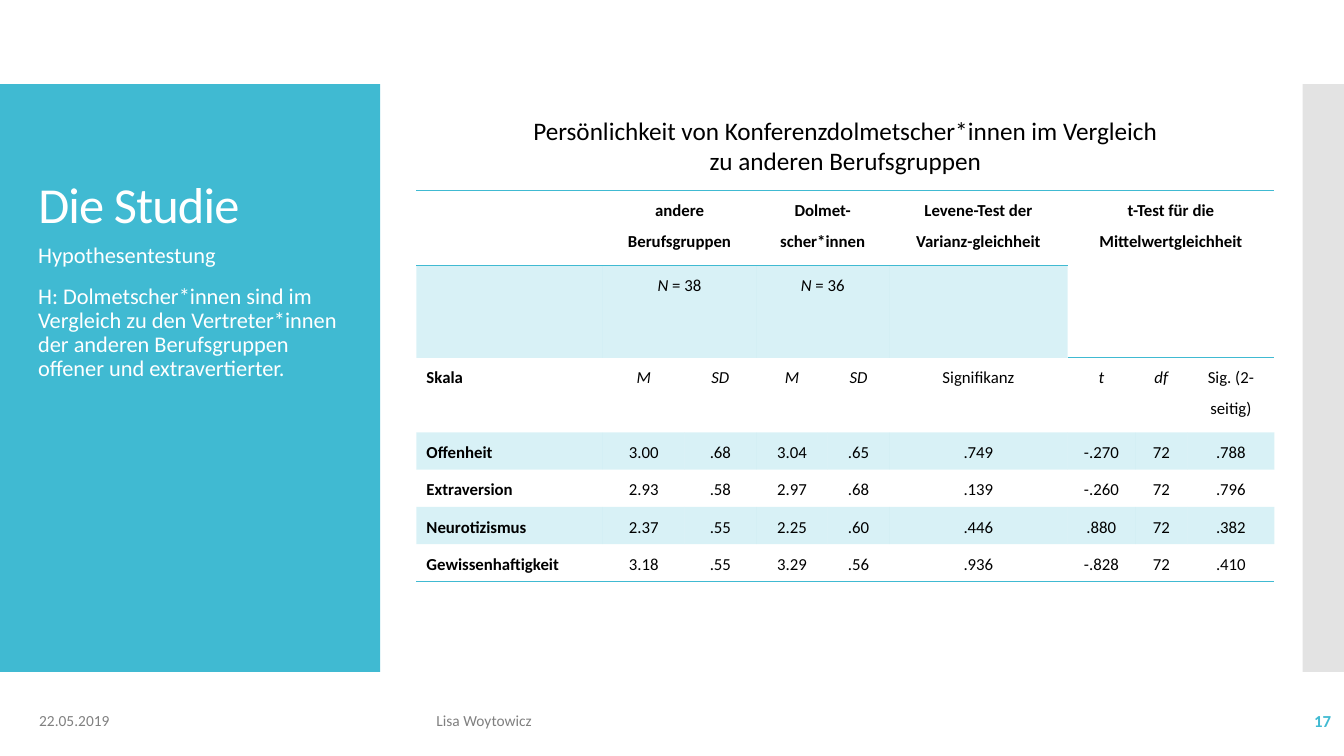
import dataclasses

import pptx
import pptx.dml.color
import pptx.enum.shapes
import pptx.enum.text
import pptx.oxml
import pptx.oxml.ns
import pptx.util

ALIGN = pptx.enum.text.PP_ALIGN
ANCHOR = pptx.enum.text.MSO_ANCHOR
NO_TABLE_STYLE = "{2D5ABB26-0587-4C30-8999-92F81FD0307C}"


@dataclasses.dataclass(frozen=True)
class Theme:
    font: str = "Calibri"
    accent: str = "40BAD2"
    edge: str = "C8C8C8"
    light: str = "FFFFFF"
    dark: str = "000000"
    muted: str = "808080"
    title: int = 36
    caption: int = 18
    body: int = 16
    cell: int = 12
    footer: int = 11
    band_alpha: int = 20
    edge_alpha: int = 50
    rule: int = 1


THEME = Theme()


@dataclasses.dataclass(frozen=True)
class Box:
    """A region in inches; at() gives a sub-region by offset and size."""
    left: float
    top: float
    width: float
    height: float

    def at(self, left, top, width, height):
        return Box(self.left + left, self.top + top, width, height)

    def emu(self):
        return [pptx.util.Inches(n) for n in dataclasses.astuple(self)]


SLIDE = Box(0, 0, 13.33, 7.5)
BAND_TOP, BAND_HEIGHT = SLIDE.height / 9, SLIDE.height * 7 / 9

COLUMNS = [1.85, 0.81, 0.71, 0.71, 0.61, 1.77, 0.67, 0.52, 0.86]
ROWS = [0.74, 0.92, 0.74] + [0.37] * 4
# First row, first column, last row, last column
MERGES = [(0, 1, 0, 2), (0, 3, 0, 4), (0, 6, 1, 8), (1, 1, 1, 2), (1, 3, 1, 4)]
# Asterisk-free cells; "_" before a text sets its first word in italics
CELLS = [
    ["", "andere Berufsgruppen", "", "Dolmet-scher*innen", "",
     "Levene-Test der Varianz-gleichheit", "t-Test für die Mittelwertgleichheit", "", ""],
    ["", "_N = 38", "", "_N = 36", "", "", "", "", ""],
    ["Skala", "_M", "_SD", "_M", "_SD", "Signifikanz", "_t", "_df", "Sig. (2-seitig)"],
    ["Offenheit", "3.00", ".68", "3.04", ".65", ".749", "-.270", "72", ".788"],
    ["Extraversion", "2.93", ".58", "2.97", ".68", ".139", "-.260", "72", ".796"],
    ["Neurotizismus", "2.37", ".55", "2.25", ".60", ".446", ".880", "72", ".382"],
    ["Gewissenhaftigkeit", "3.18", ".55", "3.29", ".56", ".936", "-.828", "72", ".410"],
]


def write(frame, *paragraphs, size, color, bold=False, align=ALIGN.LEFT, anchor=ANCHOR.TOP,
          line=1.0, before=0, after=0, tracking=0):
    """Fill a text frame; a leading "_" sets a paragraph's first word in italics."""
    frame.word_wrap = True
    frame.vertical_anchor = anchor
    for index, text in enumerate(paragraphs):
        paragraph = frame.add_paragraph() if index else frame.paragraphs[0]
        paragraph.alignment = align
        paragraph.line_spacing = line
        paragraph.space_before = pptx.util.Pt(before)
        paragraph.space_after = pptx.util.Pt(after)
        runs = [(text, False)]
        if text.startswith("_"):
            head, gap, rest = text[1:].partition(" ")
            runs = [(head, True), (gap + rest, False)]
        for words, italic in runs:
            if not words:
                continue
            run = paragraph.add_run()
            run.text = words
            run.font.name = THEME.font
            run.font.size = pptx.util.Pt(size)
            run.font.bold = bold
            run.font.italic = italic
            run.font.color.rgb = pptx.dml.color.RGBColor.from_string(color)
            if tracking:
                run.font._element.set("spc", str(tracking))


def add_text(slide, box, *paragraphs, **style):
    frame = slide.shapes.add_textbox(*box.emu()).text_frame
    write(frame, *paragraphs, **style)


def paint(fill, color, alpha=100):
    fill.solid()
    fill.fore_color.rgb = pptx.dml.color.RGBColor.from_string(color)
    if alpha < 100:
        tint = fill._xPr.find(".//" + pptx.oxml.ns.qn("a:srgbClr"))
        tint.append(pptx.oxml.parse_xml(
            f'<a:alpha {pptx.oxml.ns.nsdecls("a")} val="{alpha * 1000}"/>'))


def add_panel(slide, box, color, alpha=100):
    panel = slide.shapes.add_shape(pptx.enum.shapes.MSO_SHAPE.RECTANGLE, *box.emu())
    panel.shadow.inherit = False
    panel.line.fill.background()
    paint(panel.fill, color, alpha)


def add_rule(cell, side):
    """Draw a cell border; call before filling, as borders come first in the cell."""
    cell._tc.get_or_add_tcPr().append(pptx.oxml.parse_xml(
        f'<a:ln{side} {pptx.oxml.ns.nsdecls("a")} w="{pptx.util.Pt(THEME.rule)}">'
        f'<a:solidFill><a:srgbClr val="{THEME.accent}"/></a:solidFill></a:ln{side}>'))


def add_sidebar(slide, box):
    add_panel(slide, box, THEME.accent)
    heading = box.at(0.28, 0.4, 3.22, 1.14)
    title = slide.shapes.title
    title.left, title.top, title.width, title.height = heading.emu()
    title.text_frame.auto_size = pptx.enum.text.MSO_AUTO_SIZE.NONE
    write(title.text_frame, "Die Studie", size=THEME.title, color=THEME.light,
          anchor=ANCHOR.BOTTOM, line=0.9, tracking=-60)
    add_text(slide, heading.at(0, heading.height, heading.width, 4.09),
             "Hypothesentestung",
             "H: Dolmetscher*innen sind im Vergleich zu den Vertreter*innen "
             "der anderen Berufsgruppen offener und extravertierter.",
             size=THEME.body, color=THEME.light, line=0.9, before=12)


def add_results(slide, box):
    add_text(slide, box.at(0.92, 0, 6.67, 0.71),
             "Persönlichkeit von Konferenzdolmetscher*innen im Vergleich "
             "zu anderen Berufsgruppen",
             size=THEME.caption, color=THEME.dark, align=ALIGN.CENTER, after=8)
    area = box.at(0, 0.8, sum(COLUMNS), sum(ROWS))
    results = slide.shapes.add_table(len(ROWS), len(COLUMNS), *area.emu()).table
    results._tbl.tblPr.find(pptx.oxml.ns.qn("a:tableStyleId")).text = NO_TABLE_STYLE
    results.first_row = results.horz_banding = False
    for column, width in zip(results.columns, COLUMNS):
        column.width = pptx.util.Inches(width)
    for row, height in zip(results.rows, ROWS):
        row.height = pptx.util.Inches(height)
    for top, left, bottom, right in MERGES:
        results.cell(top, left).merge(results.cell(bottom, right))

    last = len(ROWS) - 1
    for r, texts in enumerate(CELLS):
        for c, text in enumerate(texts):
            cell = results.cell(r, c)
            in_t_test = r < 2 and c >= 6
            cell.margin_left = cell.margin_right = pptx.util.Inches(0.1)
            cell.margin_top = cell.margin_bottom = 0
            if r == 0:
                add_rule(cell, "T")
            if r in (0, last) or in_t_test:
                add_rule(cell, "B")
            if r % 2 and not in_t_test:
                paint(cell.fill, THEME.accent, THEME.band_alpha)
            else:
                cell.fill.background()
            if text:
                write(cell.text_frame, text, size=THEME.cell, color=THEME.dark,
                      bold=r == 0 or c == 0, line=1.5,
                      align=ALIGN.CENTER if c else ALIGN.JUSTIFY)


def add_footer(slide, box):
    small = dict(size=THEME.footer, color=THEME.muted, anchor=ANCHOR.MIDDLE, after=6)
    number = dict(small, size=THEME.cell, color=THEME.accent, bold=True, align=ALIGN.RIGHT)
    for left, width, text, style in [(0.29, 3, "22.05.2019", small),
                                     (4.23, 6.46, "Lisa Woytowicz", small),
                                     (11.63, 1.67, "17", number)]:
        add_text(slide, box.at(left, 0, width, box.height), text, **style)


def main():
    deck = pptx.Presentation()
    deck.slide_width = pptx.util.Inches(SLIDE.width)
    deck.slide_height = pptx.util.Inches(SLIDE.height)
    slide = deck.slides.add_slide(deck.slide_layouts.get_by_name("Title Only"))
    add_panel(slide, SLIDE.at(12.92, BAND_TOP, 0.41, BAND_HEIGHT), THEME.edge, THEME.edge_alpha)
    add_sidebar(slide, SLIDE.at(0, BAND_TOP, 3.77, BAND_HEIGHT))
    # The title placeholder comes first in the tree; lift it above the sidebar panel
    slide.shapes._spTree.append(slide.shapes.title._element)
    add_results(slide, SLIDE.at(4.13, 1.09, 8.5, 4.68))
    add_footer(slide, SLIDE.at(0, 6.95, SLIDE.width, 0.4))
    deck.save("out.pptx")


if __name__ == "__main__":
    main()
